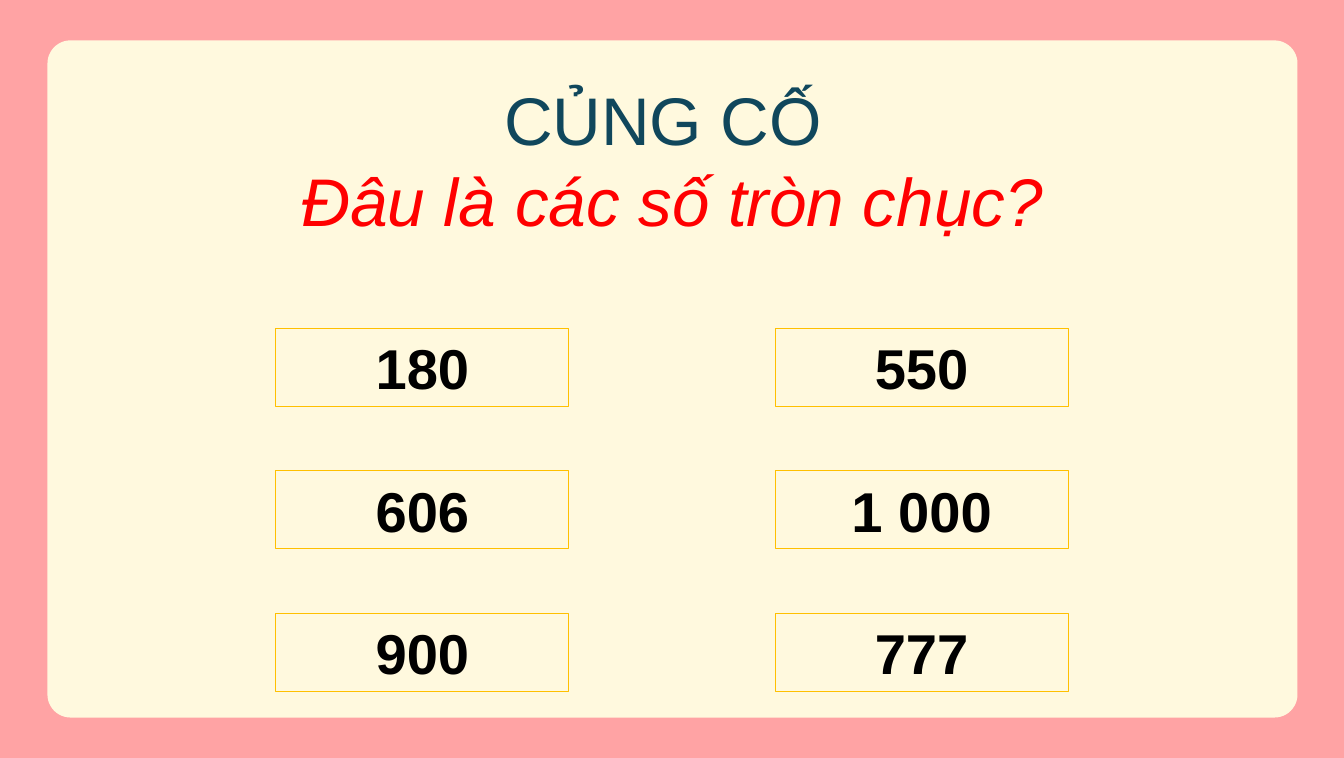
from pptx import Presentation
from pptx import util as u
from pptx.dml import color
from pptx.enum import shapes, text

COLORS = {
    "border": "FFA3A4",
    "card": "FFF9DE",
    "heading": "10475C",
    "question": "FF0000",
    "outline": "FFC000",
    "number": "000000",
}
FONT = "Arial"
PX = u.Inches(1) // 100


def rgb(name):
    return color.RGBColor.from_string(COLORS[name])


def write(paragraph, words, size=40, ink="number", bold=False, italic=False):
    paragraph.alignment = text.PP_ALIGN.CENTER
    run = paragraph.add_run()
    run.text = words
    run.font.name = FONT
    run.font.size = u.Pt(size)
    run.font.bold = bold
    run.font.italic = italic
    run.font.color.rgb = rgb(ink)


class QuizSlide:
    def __init__(self, deck):
        self.slide = deck.slides.add_slide(deck.slide_layouts[6])
        background = self.slide.background.fill
        background.solid()
        background.fore_color.rgb = rgb("border")

    def shape(self, kind, *box):
        item = self.slide.shapes.add_shape(kind, *(n * PX for n in box))
        item.shadow.inherit = False
        return item

    def card(self, *box):
        card = self.shape(shapes.MSO_SHAPE.ROUNDED_RECTANGLE, *box)
        card.adjustments[0] = 0.034
        card.fill.solid()
        card.fill.fore_color.rgb = rgb("card")
        card.line.fill.background()

    def title(self, heading, question, *box):
        frame = self.slide.shapes.add_textbox(*(n * PX for n in box)).text_frame
        frame.word_wrap = True
        frame.vertical_anchor = text.MSO_ANCHOR.TOP
        frame.margin_left = frame.margin_right = 13 * PX
        frame.margin_top = frame.margin_bottom = 13 * PX
        paragraph = frame.paragraphs[0]
        write(paragraph, heading, size=48, ink="heading")
        paragraph.add_line_break()
        write(paragraph, question, size=48, ink="question", italic=True)

    def answer(self, number, *box):
        answer = self.shape(shapes.MSO_SHAPE.RECTANGLE, *box)
        answer.fill.background()
        answer.line.color.rgb = rgb("outline")
        answer.line.width = u.Pt(0.75)
        frame = answer.text_frame
        frame.vertical_anchor = text.MSO_ANCHOR.MIDDLE
        write(frame.paragraphs[0], number, bold=True)


def main():
    deck = Presentation()
    deck.slide_width, deck.slide_height = 1330 * PX, 750 * PX
    quiz = QuizSlide(deck)
    quiz.card(47, 40, 1237, 670)
    quiz.title("CỦNG CỐ ", "Đâu là các số tròn chục?", 176, 64, 979, 78)
    answers = [("180", "550"), ("606", "1 000"), ("900", "777")]
    for row, pair in enumerate(answers):
        for column, number in enumerate(pair):
            quiz.answer(number, 273 + 494 * column, 325 + 141 * row, 290, 77)
    deck.save("out.pptx")


if __name__ == "__main__":
    main()
